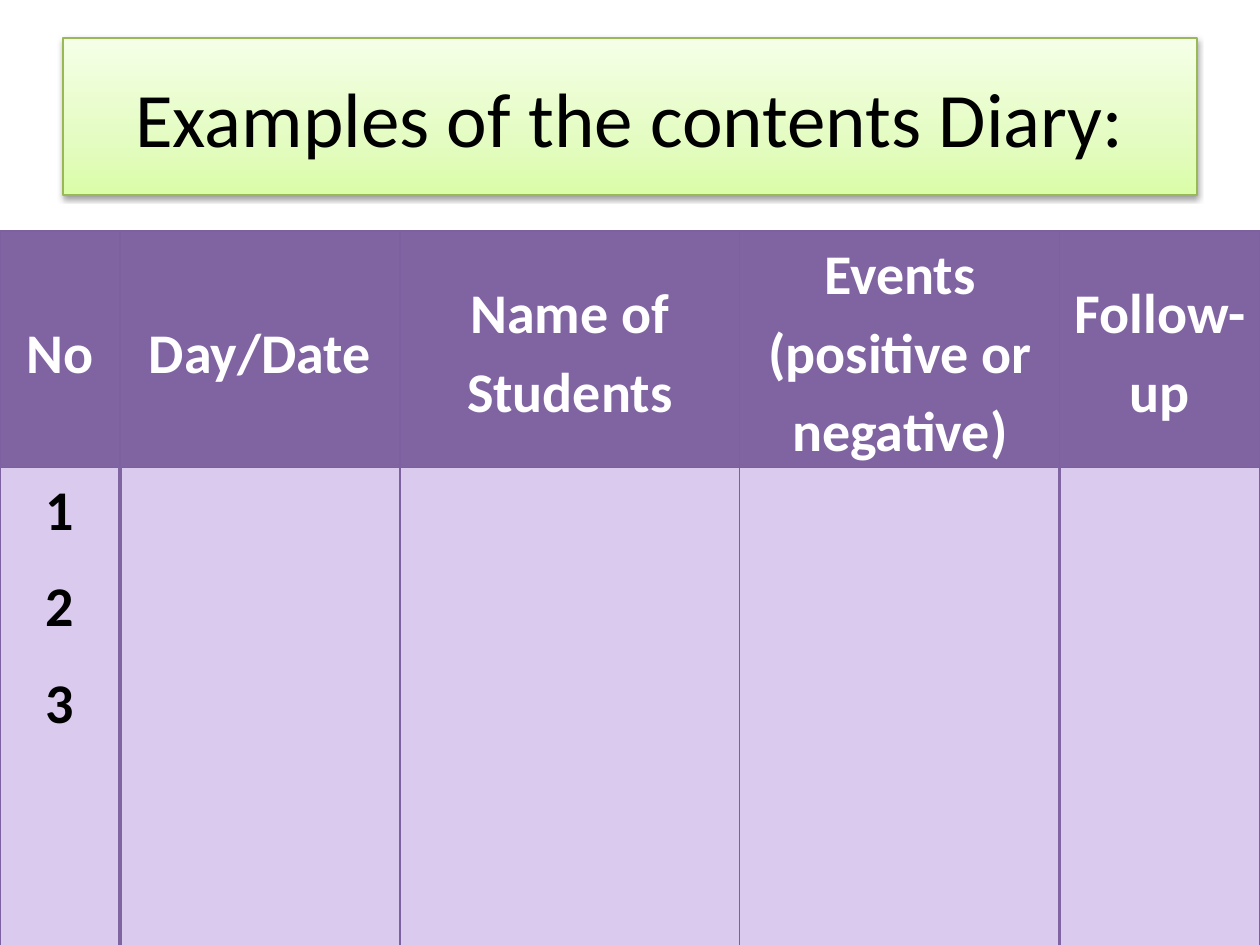
from lxml.etree import SubElement
from pptx import Presentation
from pptx.dml.color import RGBColor
from pptx.enum.shapes import MSO_SHAPE
from pptx.enum.text import MSO_ANCHOR, PP_ALIGN
from pptx.oxml import parse_xml
from pptx.oxml.ns import nsdecls, qn
from pptx.util import Emu, Pt

EMU_PER_PX = 914400 // 126
SLIDE_WIDTH, SLIDE_HEIGHT = 1260, 945
COLUMN_WIDTHS = [120, 280, 340, 320, 200]
ROW_HEIGHTS = [228, 486]
HEADERS = ["No", "Day/Date", "Name of Students",
           "Events (positive or negative)", "Follow-up"]
TITLE_GRADIENT = [(0, "DAFDA7"), (35, "E4FCC2"), (100, "F5FFE7")]
GRID_LINE = ("7D60A0", 0.75)
THICK_LINE = ("8064A2", 2)


def px(length):
    return Emu(length * EMU_PER_PX)


def color(hex_string):
    return RGBColor.from_string(hex_string)


class DiarySlide:
    """Holds the slide and its style."""

    font = "Calibri"
    black, white = "000000", "FFFFFF"
    header_fill, body_fill = "8064A2", "DACAEE"

    def __init__(self, slide):
        self.slide = slide

    def format_paragraph(self, paragraph, size, text_color, bold=False):
        paragraph.alignment = PP_ALIGN.CENTER
        for run in paragraph.runs:
            run.font.name = self.font
            run.font.size = Pt(size)
            run.font.bold = bold
            run.font.color.rgb = color(text_color)

    def add_title(self, text, left, top, width, height):
        shape = self.slide.shapes.add_shape(
            MSO_SHAPE.RECTANGLE, px(left), px(top), px(width), px(height))
        shape.line.color.rgb = color("98B955")
        shape.line.width = Pt(0.75)
        self.add_gradient_and_shadow(shape)
        text_frame = shape.text_frame
        text_frame.word_wrap = True
        text_frame.vertical_anchor = MSO_ANCHOR.MIDDLE
        text_frame.text = text
        self.format_paragraph(text_frame.paragraphs[0], 44, self.black)

    def add_gradient_and_shadow(self, shape):
        """Fill upwards with the title gradient and drop a soft shadow."""
        stops = "".join(
            f'<a:gs pos="{position * 1000}"><a:srgbClr val="{value}"/></a:gs>'
            for position, value in TITLE_GRADIENT)
        properties = shape._element.spPr
        properties.find(qn("a:prstGeom")).addnext(parse_xml(
            f'<a:gradFill {nsdecls("a")} rotWithShape="1"><a:gsLst>{stops}</a:gsLst>'
            '<a:lin ang="16200000" scaled="0"/></a:gradFill>'))
        properties.append(parse_xml(
            f'<a:effectLst {nsdecls("a")}><a:outerShdw blurRad="40000" dist="20000" '
            'dir="5400000" rotWithShape="0"><a:srgbClr val="000000">'
            '<a:alpha val="38000"/></a:srgbClr></a:outerShdw></a:effectLst>'))

    def add_table(self, left, top, rows):
        """Add a table; each cell is a list of paragraph texts."""
        table = self.slide.shapes.add_table(
            len(rows), len(COLUMN_WIDTHS), px(left), px(top),
            px(sum(COLUMN_WIDTHS)), px(sum(ROW_HEIGHTS))).table
        for column, width in zip(table.columns, COLUMN_WIDTHS):
            column.width = px(width)
        for row, height in zip(table.rows, ROW_HEIGHTS):
            row.height = px(height)
        last = len(COLUMN_WIDTHS) - 1
        for row_index, row in enumerate(rows):
            for column_index, texts in enumerate(row):
                cell = table.cell(row_index, column_index)
                is_header = row_index == 0
                left_line = right_line = GRID_LINE
                if not is_header and column_index in (1, last):
                    left_line = THICK_LINE
                if not is_header and column_index in (0, last - 1):
                    right_line = THICK_LINE
                self.set_borders(cell, left_line, right_line)
                self.fill_cell(cell, texts, is_header)

    def set_borders(self, cell, left_line, right_line):
        properties = cell._tc.get_or_add_tcPr()
        lines = {"L": left_line, "R": right_line, "T": GRID_LINE, "B": GRID_LINE}
        for side, (line_color, width) in lines.items():
            line = SubElement(properties, qn(f"a:ln{side}"), w=str(Pt(width)))
            fill = SubElement(line, qn("a:solidFill"))
            SubElement(fill, qn("a:srgbClr"), val=line_color)

    def fill_cell(self, cell, texts, is_header):
        cell.fill.solid()
        cell.fill.fore_color.rgb = color(
            self.header_fill if is_header else self.body_fill)
        cell.margin_left = cell.margin_right = px(9)
        cell.margin_top = cell.margin_bottom = 0
        cell.vertical_anchor = MSO_ANCHOR.MIDDLE if is_header else MSO_ANCHOR.TOP
        cell.text_frame.text = "\n".join(texts)
        for paragraph in cell.text_frame.paragraphs:
            paragraph.line_spacing = 1.15
            paragraph.space_after = Pt(10)
            self.format_paragraph(
                paragraph, 32, self.white if is_header else self.black, bold=True)


def main():
    presentation = Presentation()
    presentation.slide_width = px(SLIDE_WIDTH)
    presentation.slide_height = px(SLIDE_HEIGHT)
    slide = presentation.slides.add_slide(presentation.slide_layouts[6])
    diary = DiarySlide(slide)
    diary.add_title("Examples of the contents Diary:", 63, 38, 1134, 157)
    header_row = [[header] for header in HEADERS]
    body_row = [["1", "2", "3"]] + [[] for _ in HEADERS[1:]]
    diary.add_table(0, 231, [header_row, body_row])
    presentation.save("out.pptx")


if __name__ == "__main__":
    main()
